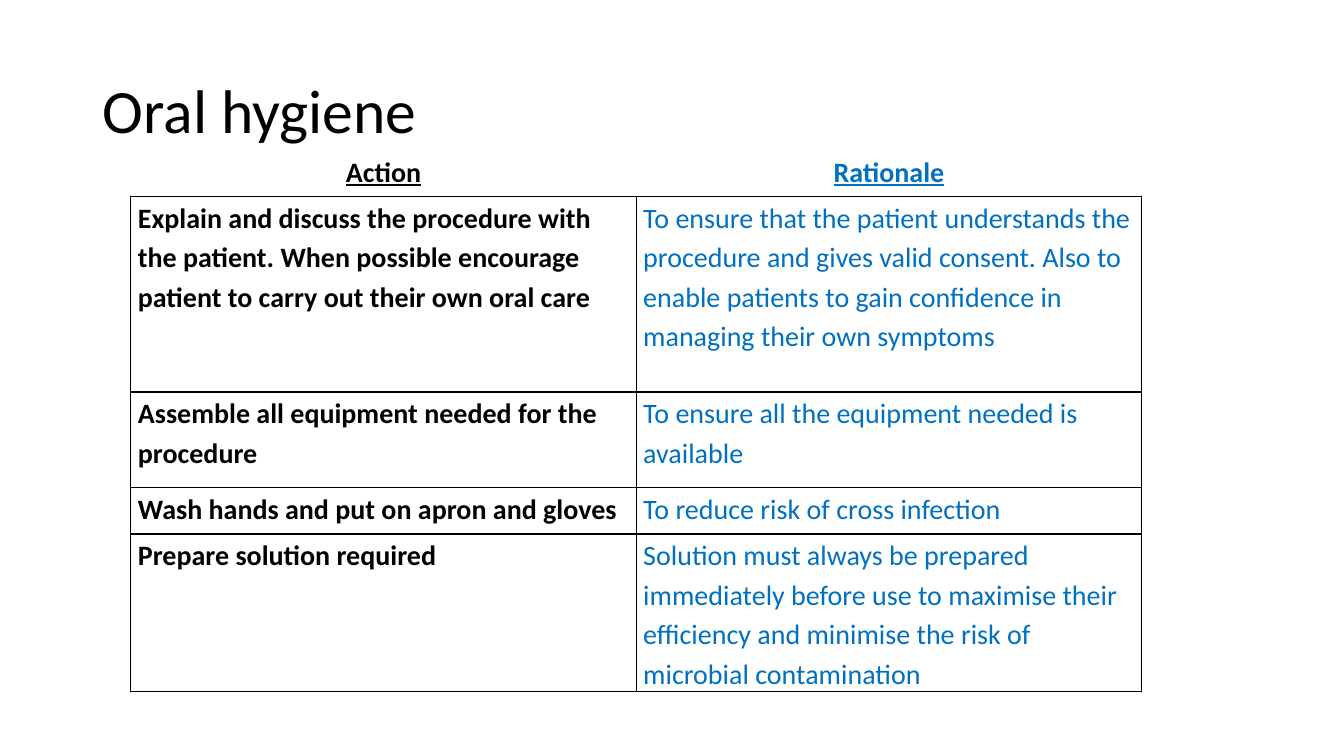
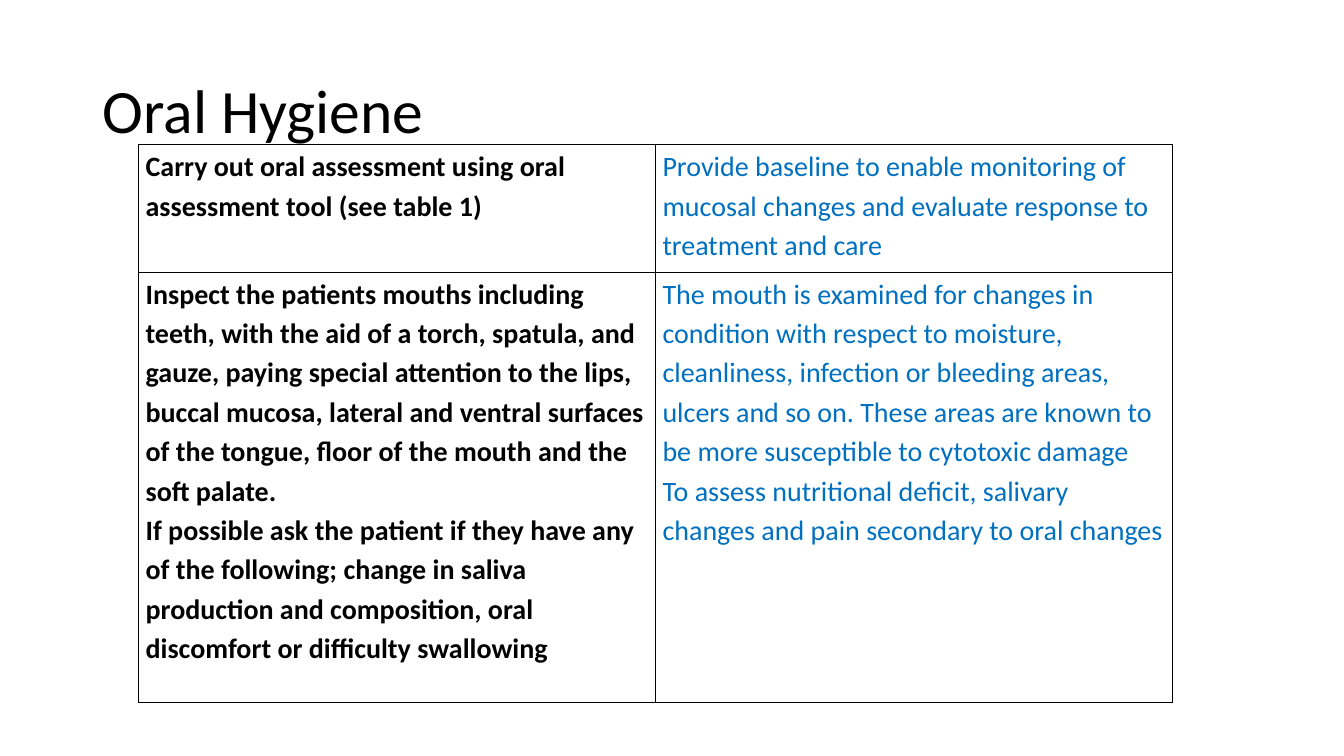
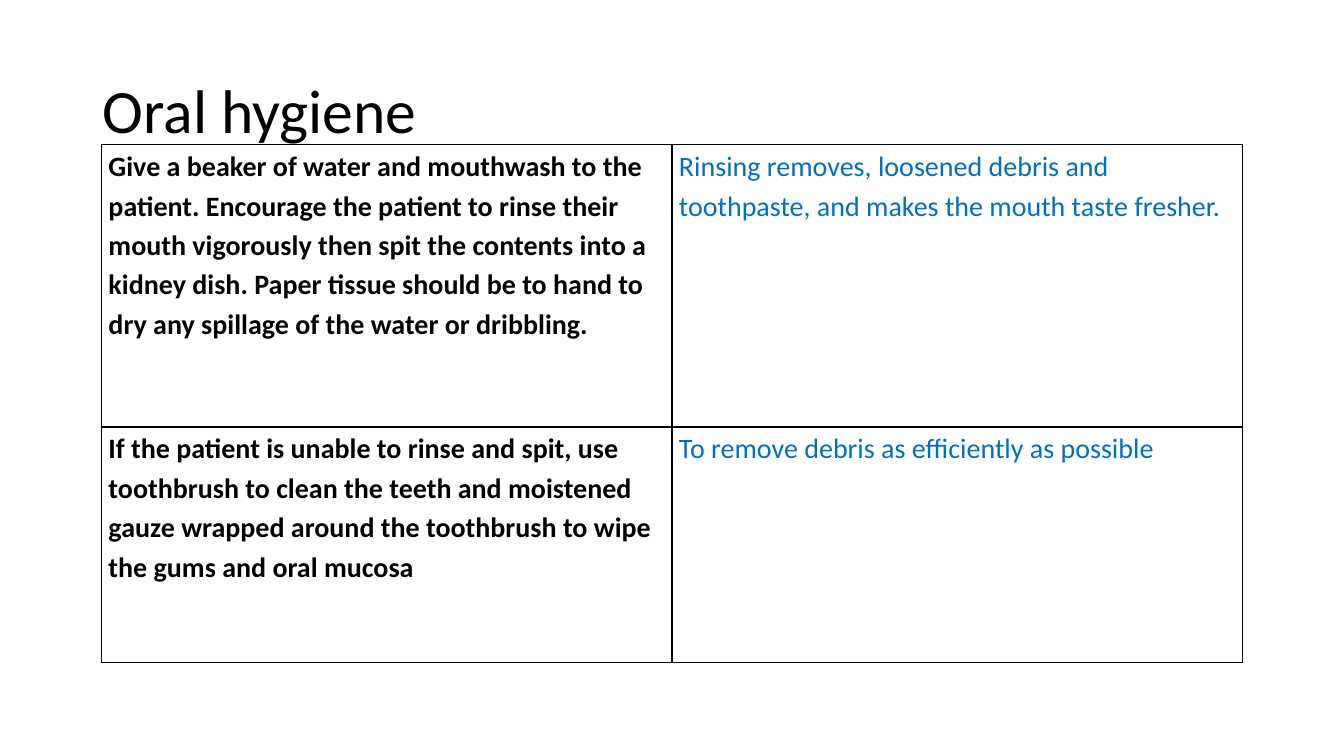
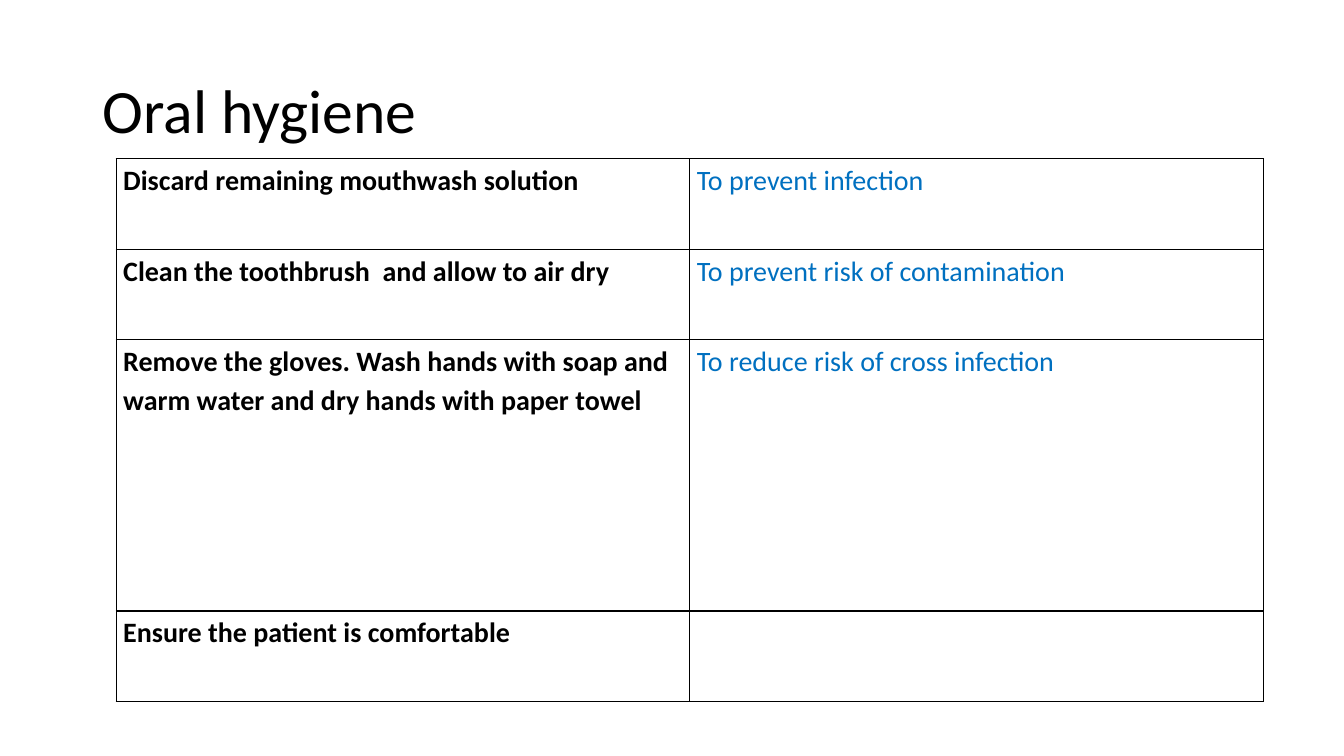
from lxml import etree
from pptx import Presentation
from pptx.dml.color import RGBColor
from pptx.enum.text import MSO_ANCHOR, PP_ALIGN
from pptx.oxml.ns import qn
from pptx.util import Pt

LEFT, CENTER = PP_ALIGN.LEFT, PP_ALIGN.CENTER
MIDDLE = MSO_ANCHOR.MIDDLE
TITLE_ONLY = 5

FONT = "Calibri"
BLACK, BLUE, WHITE = "000000", "0070C0", "FFFFFF"
TITLE_BOX = (66, 29, 828, 104)
HEADS = ("Action", "Rationale")

# Each slide: title, table box (left, top, width), row heights, headed?, rows
SLIDES = [
    ("Oral hygiene", (93.5, 107.5, 722), (33, 139.5, 68.5, 33, 112.5), True, [
        HEADS,
        ("Explain and discuss the procedure with the patient. When possible "
         "encourage patient to carry out their own oral care",
         "To ensure that the patient understands the procedure and gives valid "
         "consent. Also to enable patients to gain confidence in managing "
         "their own symptoms"),
        ("Assemble all equipment needed for the procedure",
         "To ensure all the equipment needed is available"),
        ("Wash hands and put on apron and gloves",
         "To reduce risk of cross infection"),
        ("Prepare solution required",
         "Solution must always be prepared immediately before use to maximise "
         "their efficiency and minimise the risk of microbial contamination"),
    ]),
    ("Oral Hygiene", (99, 103.5, 738.5), (91, 307.5), False, [
        ("Carry out oral assessment using oral assessment tool (see table 1)",
         "Provide baseline to enable monitoring of mucosal changes and "
         "evaluate response to treatment and care"),
        ("Inspect the patients mouths including teeth, with the aid of a "
         "torch, spatula, and gauze, paying special attention to the lips, "
         "buccal mucosa, lateral and ventral surfaces of the tongue, floor of "
         "the mouth and the soft palate.\n"
         "If possible ask the patient if they have any of the following; "
         "change in saliva production and composition, oral discomfort or "
         "difficulty swallowing",
         "The mouth is examined for changes in condition with respect to "
         "moisture, cleanliness, infection or bleeding areas, ulcers and so "
         "on. These areas are known to be more susceptible to cytotoxic "
         "damage\n"
         "To assess nutritional deficit, salivary changes and pain secondary "
         "to oral changes"),
    ]),
    ("Oral hygiene", (72.5, 103.5, 815), (201.5, 168), False, [
        ("Give a beaker of water and mouthwash to the patient. Encourage the "
         "patient to rinse their mouth vigorously then spit the contents into "
         "a kidney dish. Paper tissue should be to hand to dry any spillage "
         "of the water or dribbling.",
         "Rinsing removes, loosened debris and toothpaste, and makes the "
         "mouth taste fresher."),
        ("If the patient is unable to rinse and spit, use toothbrush to clean "
         "the teeth and moistened gauze wrapped around the toothbrush to wipe "
         "the gums and oral mucosa",
         "To remove debris as efficiently as possible"),
    ]),
    ("Oral hygiene", (83, 113.5, 819.5), (64.5, 64.5, 194, 64.5), False, [
        ("Discard remaining mouthwash solution", "To prevent infection"),
        ("Clean the toothbrush  and allow to air dry",
         "To prevent risk of contamination"),
        ("Remove the gloves. Wash hands with soap and warm water and dry "
         "hands with paper towel",
         "To reduce risk of cross infection"),
        ("Ensure the patient is comfortable", ""),
    ]),
]


def rgb(color):
    return RGBColor.from_string(color)


def style(frame, size, color, bold=False, line=False, align=LEFT, gap=1.0):
    """Format every paragraph and run of a text frame."""
    for para in frame.paragraphs:
        para.alignment = align
        para.line_spacing = gap
        for run in para.runs:
            font = run.font
            font.name, font.size = FONT, Pt(size)
            font.bold, font.underline = bold, line
            font.color.rgb = rgb(color)


def edge(cell, side, color):
    """Draw one 1 pt cell border; side is L, R, T or B."""
    props = cell._tc.get_or_add_tcPr()
    line = etree.SubElement(props, qn("a:ln" + side), w=str(Pt(1)))
    fill = etree.SubElement(line, qn("a:solidFill"))
    etree.SubElement(fill, qn("a:srgbClr"), val=color)


def add_title(slide, text, box):
    title = slide.shapes.title
    title.left, title.top, title.width, title.height = map(Pt, box)
    frame = title.text_frame
    frame.text = text
    frame.vertical_anchor = MIDDLE
    style(frame, 44, BLACK, gap=0.9)


def fill_cell(cell, text, color, bold, head):
    # Borders come before the fill in the cell properties
    for side in "LRTB":
        edge(cell, side, WHITE if head and side != "B" else BLACK)
    cell.fill.solid()
    cell.fill.fore_color.rgb = rgb(WHITE)
    cell.margin_left = cell.margin_right = Pt(5)
    cell.margin_top = cell.margin_bottom = 0
    cell.text_frame.text = text
    style(cell.text_frame, 20, color, bold or head, head,
          CENTER if head else LEFT, 1.15)


def add_grid(slide, box, heights, headed, rows):
    """Two equal columns: actions in bold black, reasons in blue."""
    left, top, width = box
    table = slide.shapes.add_table(
        len(rows), 2, Pt(left), Pt(top), Pt(width), Pt(sum(heights))).table
    table.first_row = table.horz_banding = False
    for col in table.columns:
        col.width = Pt(width / 2)
    for i, (height, (action, reason)) in enumerate(zip(heights, rows)):
        table.rows[i].height = Pt(height)
        head = headed and i == 0
        fill_cell(table.cell(i, 0), action, BLACK, True, head)
        fill_cell(table.cell(i, 1), reason, BLUE, False, head)


def main():
    deck = Presentation()
    deck.slide_width, deck.slide_height = Pt(960), Pt(540)
    for title, box, heights, headed, rows in SLIDES:
        slide = deck.slides.add_slide(deck.slide_layouts[TITLE_ONLY])
        add_title(slide, title, TITLE_BOX)
        add_grid(slide, box, heights, headed, rows)
    deck.save("out.pptx")


if __name__ == "__main__":
    main()
